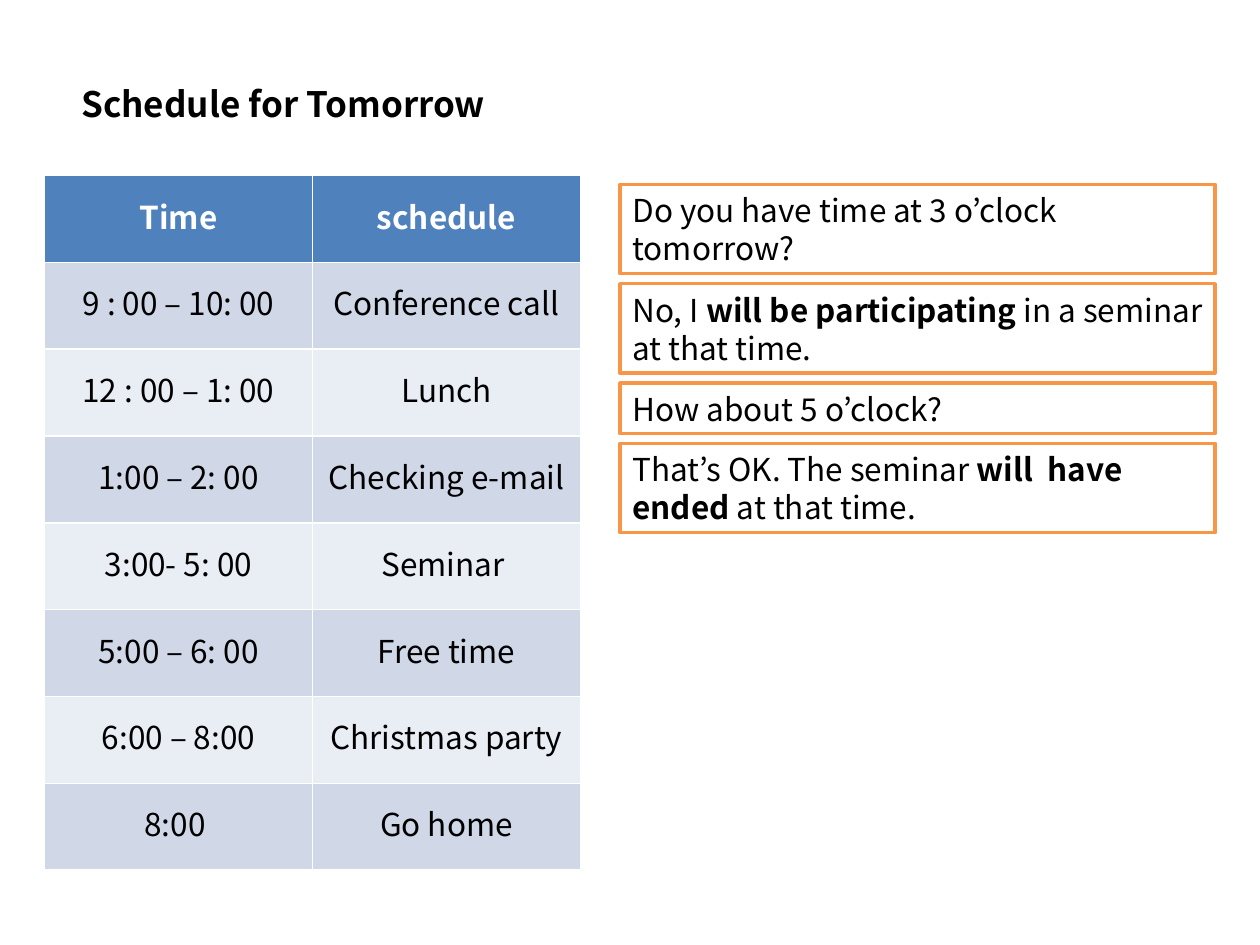
from dataclasses import dataclass

from pptx import Presentation
from pptx.dml.color import RGBColor
from pptx.enum.shapes import MSO_SHAPE as Shape
from pptx.enum.text import MSO_ANCHOR as Anchor, MSO_AUTO_SIZE as AutoSize, PP_ALIGN as Align
from pptx.util import Cm, Pt


@dataclass(frozen=True)
class Theme:
    font: str = "Noto Sans CJK KR"
    ink: str = "000000"
    paper: str = "FFFFFF"
    header: str = "4F81BD"
    bands: tuple = ("D0D8E8", "E9EDF4")
    outline: str = "F79646"
    title_size: float = 20
    body_size: float = 18
    leading: float = 1.21


THEME = Theme()

SCHEDULE = [
    ("Time", "schedule"),
    ("9 : 00 – 10: 00", "Conference call"),
    ("12 : 00 – 1: 00", "Lunch"),
    ("1:00 – 2: 00", "Checking e-mail"),
    ("3:00- 5: 00", "Seminar "),
    ("5:00 – 6: 00", "Free time"),
    ("6:00 – 8:00", "Christmas party"),
    ("8:00 ", "Go home"),
]

# Each remark: number of lines, then pieces of text with their boldness
DIALOGUE = [
    (2, [("Do you have time at 3 o’clock tomorrow?", False)]),
    (2, [("No, I ", False), ("will be participating ", True),
         ("in a seminar at that time.", False)]),
    (1, [("How about 5 o’clock?", False)]),
    (2, [("That’s OK. The seminar ", False), ("will  have ended ", True),
         ("at that time.", False)]),
]


def color(code):
    return RGBColor.from_string(code)


def format_paragraph(paragraph, align, size=THEME.body_size, ink=THEME.ink, bold=False):
    paragraph.alignment = align
    paragraph.line_spacing = Pt(round(size * THEME.leading, 1))
    for run in paragraph.runs:
        run.font.name = THEME.font
        run.font.size = Pt(size)
        run.font.bold = bold
        run.font.color.rgb = color(ink)


def place_title(slide, left, top, width, height):
    title = slide.shapes.title
    title.left, title.top, title.width, title.height = left, top, width, height
    frame = title.text_frame
    frame.text = "Schedule for Tomorrow"
    frame.auto_size = AutoSize.NONE
    frame.vertical_anchor = Anchor.TOP
    format_paragraph(frame.paragraphs[0], Align.CENTER, THEME.title_size, bold=True)


def add_schedule(slide, left, top, width, height):
    # The default table style supplies the white rules between cells
    table = slide.shapes.add_table(len(SCHEDULE), 2, left, top, width, height).table
    for row, entries in enumerate(SCHEDULE):
        is_header = row == 0
        fill = THEME.header if is_header else THEME.bands[(row - 1) % 2]
        ink = THEME.paper if is_header else THEME.ink
        for column, entry in enumerate(entries):
            cell = table.cell(row, column)
            cell.text_frame.text = entry
            cell.vertical_anchor = Anchor.MIDDLE
            cell.fill.solid()
            cell.fill.fore_color.rgb = color(fill)
            format_paragraph(cell.text_frame.paragraphs[0], Align.CENTER, ink=ink, bold=is_header)


def add_remark(slide, pieces, left, top, width, height):
    remark = slide.shapes.add_shape(Shape.RECTANGLE, left, top, width, height)
    remark.shadow.inherit = False
    remark.fill.solid()
    remark.fill.fore_color.rgb = color(THEME.paper)
    remark.line.color.rgb = color(THEME.outline)
    remark.line.width = Pt(2)
    frame = remark.text_frame
    frame.word_wrap = True
    paragraph = frame.paragraphs[0]
    for words, _ in pieces:
        paragraph.add_run().text = words
    format_paragraph(paragraph, Align.LEFT)
    for run, (_, bold) in zip(paragraph.runs, pieces):
        run.font.bold = bold


def add_dialogue(slide, left, top, width):
    # Remarks stacked with equal gaps, as tall as their lines need
    padding, line, gap = Cm(0.24), Cm(0.78), Cm(0.2)
    for lines, pieces in DIALOGUE:
        height = padding + lines * line
        add_remark(slide, pieces, left, top, width, height)
        top += height + gap


def main():
    deck = Presentation()
    deck.slide_width, deck.slide_height = Cm(25.4), Cm(19.05)
    slide = deck.slides.add_slide(deck.slide_layouts[5])
    place_title(slide, Cm(0.71), Cm(1.52), Cm(10), Cm(1.11))
    add_schedule(slide, Cm(0.9), Cm(3.54), Cm(10.8), Cm(14))
    add_dialogue(slide, Cm(12.5), Cm(3.72), Cm(12))
    deck.save("out.pptx")


if __name__ == "__main__":
    main()
